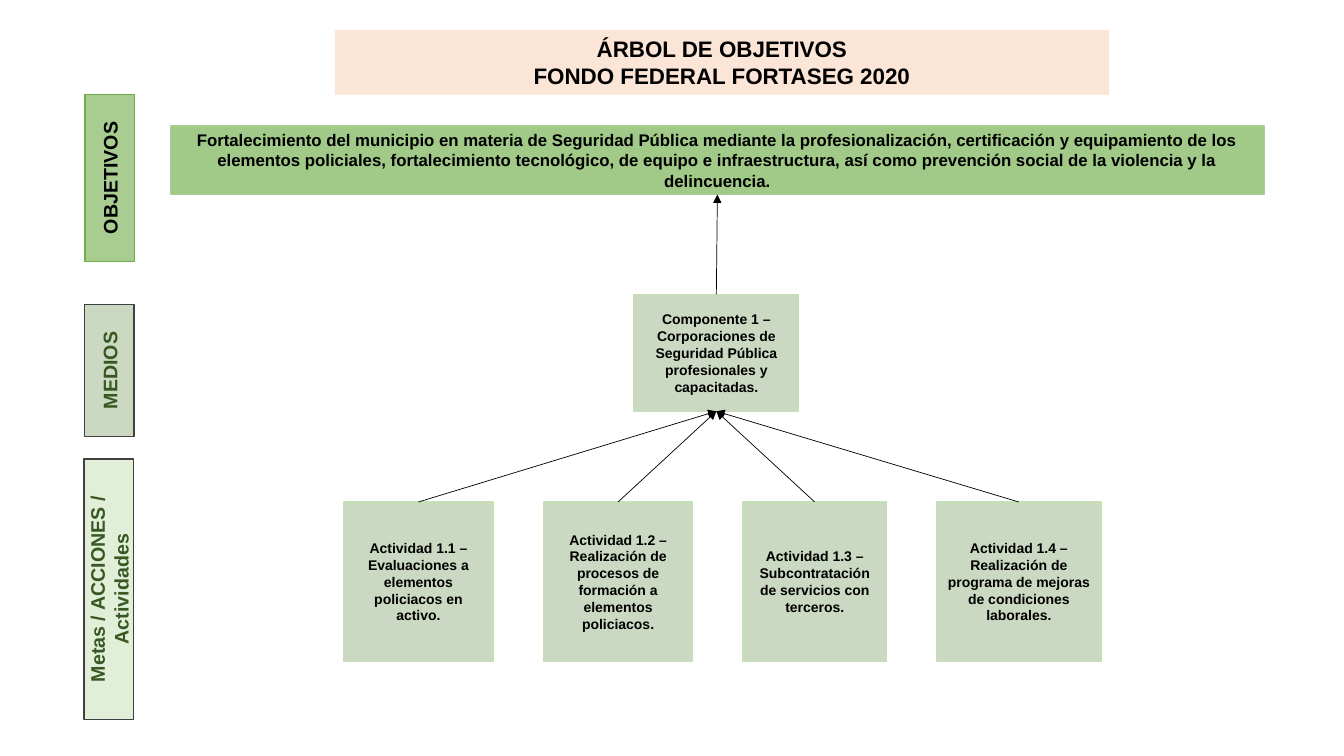
from dataclasses import dataclass

from lxml import etree
from pptx import Presentation
from pptx.dml.color import RGBColor
from pptx.enum.shapes import MSO_CONNECTOR, MSO_SHAPE
from pptx.enum.text import MSO_ANCHOR, MSO_AUTO_SIZE, PP_ALIGN
from pptx.oxml.ns import qn
from pptx.util import Inches, Pt

STRAIGHT = MSO_CONNECTOR.STRAIGHT
RECTANGLE = MSO_SHAPE.RECTANGLE
PROCESS = MSO_SHAPE.FLOWCHART_PROCESS
TOP = MSO_ANCHOR.TOP
MIDDLE = MSO_ANCHOR.MIDDLE
GROW = MSO_AUTO_SIZE.SHAPE_TO_FIT_TEXT
CENTER = PP_ALIGN.CENTER
TOP_SITE, BOTTOM_SITE = 0, 2


@dataclass(frozen=True)
class Theme:
    font: str = "Arial"
    black: str = "000000"
    peach: str = "FBE5D6"
    green: str = "70AD47"
    moss: str = "548235"
    forest: str = "385723"
    soft_green: str = "A9D18E"
    pale_green: str = "C5E0B4"
    charcoal: str = "404040"
    title_size: int = 16
    level_size: int = 14
    objective_size: int = 12
    node_size: int = 10
    border: float = 1
    arrow: float = 0.5


class ObjectiveTree:
    def __init__(self, slide, theme):
        self.slide = slide
        self.theme = theme

    def box(self, text, bounds, fill, size, opacity=100, border=None,
            ink=None, preset=PROCESS, anchor=MIDDLE):
        shape = self.slide.shapes.add_shape(preset, *map(Inches, bounds))
        shape.shadow.inherit = False
        shape.fill.solid()
        shape.fill.fore_color.rgb = RGBColor.from_string(fill)
        if opacity < 100:
            color = shape.fill._xPr.find(".//" + qn("a:srgbClr"))
            etree.SubElement(color, qn("a:alpha"), val=str(opacity * 1000))
        if border:
            shape.line.color.rgb = RGBColor.from_string(border)
            shape.line.width = Pt(self.theme.border)
        else:
            shape.line.fill.background()
        frame = shape.text_frame
        frame.text = text
        frame.word_wrap = True
        frame.vertical_anchor = anchor
        for paragraph in frame.paragraphs:
            paragraph.alignment = CENTER
            for run in paragraph.runs:
                run.font.name = self.theme.font
                run.font.size = Pt(size)
                run.font.bold = True
                run.font.color.rgb = RGBColor.from_string(ink or self.theme.black)
        return shape

    def title(self, text, bounds):
        banner = self.box(text, bounds, self.theme.peach, self.theme.title_size,
                          preset=RECTANGLE, anchor=TOP)
        banner.text_frame.auto_size = GROW

    def objective(self, text, bounds):
        return self.box(text, bounds, self.theme.green, self.theme.objective_size,
                        65, self.theme.soft_green)

    def level(self, text, bounds, fill, opacity, border, ink):
        label = self.box(text, bounds, fill, self.theme.level_size, opacity, border, ink)
        label.rotation = 270

    def node(self, text, bounds):
        return self.box(text, bounds, self.theme.moss, self.theme.node_size,
                        30, self.theme.pale_green)

    def arrow(self, child, parent):
        link = self.slide.shapes.add_connector(STRAIGHT, 0, 0, 0, 0)
        link.begin_connect(child, TOP_SITE)
        link.end_connect(parent, BOTTOM_SITE)
        link.line.color.rgb = RGBColor.from_string(self.theme.black)
        link.line.width = Pt(self.theme.arrow)
        etree.SubElement(link.line._get_or_add_ln(), qn("a:tailEnd"), type="triangle")
        etree.SubElement(link._element.spPr, qn("a:effectLst"))


def main():
    presentation = Presentation()
    presentation.slide_width = Inches(13.33)
    presentation.slide_height = Inches(7.5)
    theme = Theme()
    tree = ObjectiveTree(
        presentation.slides.add_slide(presentation.slide_layouts[6]), theme)

    tree.title("ÁRBOL DE OBJETIVOS\nFONDO FEDERAL FORTASEG 2020", (3.32, 0.3, 7.68, 0.64))
    objective = tree.objective(
        "Fortalecimiento del municipio en materia de Seguridad Pública mediante la "
        "profesionalización, certificación y equipamiento de los elementos policiales, "
        "fortalecimiento tecnológico, de equipo e infraestructura, así como prevención "
        "social de la violencia y la delincuencia.",
        (1.69, 1.25, 10.85, 0.68))

    levels = [
        ("OBJETIVOS", (0.26, 1.52, 1.66, 0.49), theme.green, 60, theme.green, theme.black),
        ("MEDIOS", (0.43, 3.43, 1.31, 0.49), theme.moss, 30, theme.charcoal, theme.forest),
        ("Metas / ACCIONES / Actividades", (-0.21, 5.6, 2.58, 0.49),
         theme.pale_green, 50, theme.charcoal, theme.forest),
    ]
    for level in levels:
        tree.level(*level)

    component = tree.node(
        "Componente 1 – Corporaciones de Seguridad Pública profesionales y capacitadas.",
        (6.29, 2.92, 1.63, 1.16))
    tree.arrow(component, objective)

    activities = [
        ("Evaluaciones a elementos policiacos en activo.", 3.41, 1.48),
        ("Realización de procesos de formación a elementos policiacos.", 5.39, 1.48),
        ("Subcontratación de servicios con terceros.", 7.37, 1.42),
        ("Realización de programa de mejoras de condiciones laborales.", 9.29, 1.63),
    ]
    for number, (task, left, width) in enumerate(activities, 1):
        activity = tree.node(f"Actividad 1.{number} – {task}", (left, 4.98, width, 1.58))
        tree.arrow(activity, component)

    presentation.save("out.pptx")


if __name__ == "__main__":
    main()
